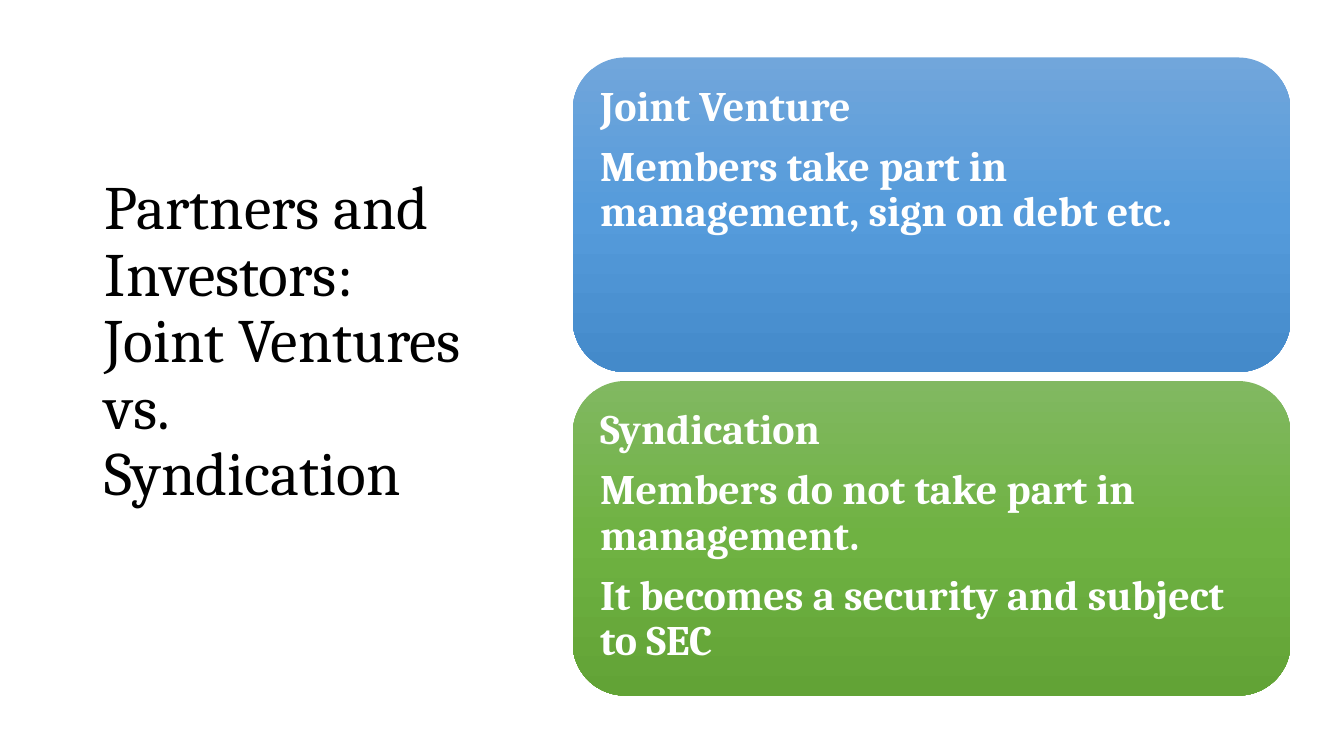
from copy import deepcopy

from pptx import Presentation
from pptx.dml.color import RGBColor
from pptx.enum.shapes import MSO_SHAPE
from pptx.enum.text import MSO_ANCHOR, MSO_AUTO_SIZE, PP_ALIGN
from pptx.oxml.ns import qn
from pptx.util import Inches, Pt

BLACK = RGBColor(0x00, 0x00, 0x00)
WHITE = RGBColor(0xFF, 0xFF, 0xFF)
BLUES = (RGBColor(0x71, 0xA6, 0xDB), RGBColor(0x55, 0x9B, 0xDB), RGBColor(0x44, 0x8A, 0xCA))
GREENS = (RGBColor(0x81, 0xB8, 0x61), RGBColor(0x6F, 0xB2, 0x42), RGBColor(0x62, 0xA3, 0x36))

CARDS = (
    (BLUES, ("Joint Venture", "Members take part in management, sign on debt etc.")),
    (GREENS, ("Syndication", "Members do not take part in management.",
              "It becomes a security and subject to SEC")),
)
CARD_TOP = 0.57
CARD_PITCH = 3.21


class SlideBuilder:
    font_name = "Cambria"
    line_spacing = 0.9

    def __init__(self, slide):
        self.slide = slide

    def add_run(self, paragraph, text, size, color, bold=False):
        run = paragraph.add_run()
        run.text = text
        run.font.name = self.font_name
        run.font.size = Pt(size)
        run.font.bold = bold
        run.font.color.rgb = color

    def title(self, lines):
        title = self.slide.shapes.title
        title.left, title.top = Inches(0.94), Inches(1.11)
        title.width, title.height = Inches(3.74), Inches(5.24)
        frame = title.text_frame
        frame.word_wrap = True
        frame.auto_size = MSO_AUTO_SIZE.NONE
        frame.vertical_anchor = MSO_ANCHOR.MIDDLE
        frame.margin_bottom = Inches(0.71)
        paragraph = frame.paragraphs[0]
        paragraph.alignment = PP_ALIGN.LEFT
        paragraph.line_spacing = self.line_spacing
        for index, line in enumerate(lines):
            if index:
                paragraph.add_line_break()
            self.add_run(paragraph, line, 44, BLACK)

    def gradient(self, shape, colors):
        shape.fill.gradient()
        shape.fill.gradient_angle = 270
        stop_list = shape._element.spPr.find(".//" + qn("a:gsLst"))
        stop_list.insert(1, deepcopy(stop_list[0]))
        for index, (stop, color) in enumerate(zip(shape.fill.gradient_stops, colors)):
            stop.position = index / (len(colors) - 1)
            stop.color.rgb = color

    def card(self, top, colors, texts):
        shape = self.slide.shapes.add_shape(
            MSO_SHAPE.ROUNDED_RECTANGLE, Inches(5.68), Inches(top), Inches(7.12), Inches(3.12))
        shape.shadow.inherit = False
        shape.line.fill.background()
        self.gradient(shape, colors)
        frame = shape.text_frame
        frame.word_wrap = True
        frame.vertical_anchor = MSO_ANCHOR.TOP
        frame.margin_left = frame.margin_right = Inches(0.12)
        frame.margin_top = frame.margin_bottom = Inches(0.12)
        for index, text in enumerate(texts):
            paragraph = frame.add_paragraph() if index else frame.paragraphs[0]
            paragraph.alignment = PP_ALIGN.LEFT
            paragraph.line_spacing = self.line_spacing
            paragraph.space_after = Pt(10.5)
            self.add_run(paragraph, text, 30, WHITE, bold=True)


def main():
    presentation = Presentation()
    presentation.slide_width = Inches(13.33)
    presentation.slide_height = Inches(7.5)
    builder = SlideBuilder(presentation.slides.add_slide(presentation.slide_layouts[5]))
    builder.title(("Partners and Investors:", "Joint Ventures vs. Syndication"))
    for index, (colors, texts) in enumerate(CARDS):
        builder.card(CARD_TOP + index * CARD_PITCH, colors, texts)
    presentation.save("out.pptx")


if __name__ == "__main__":
    main()
